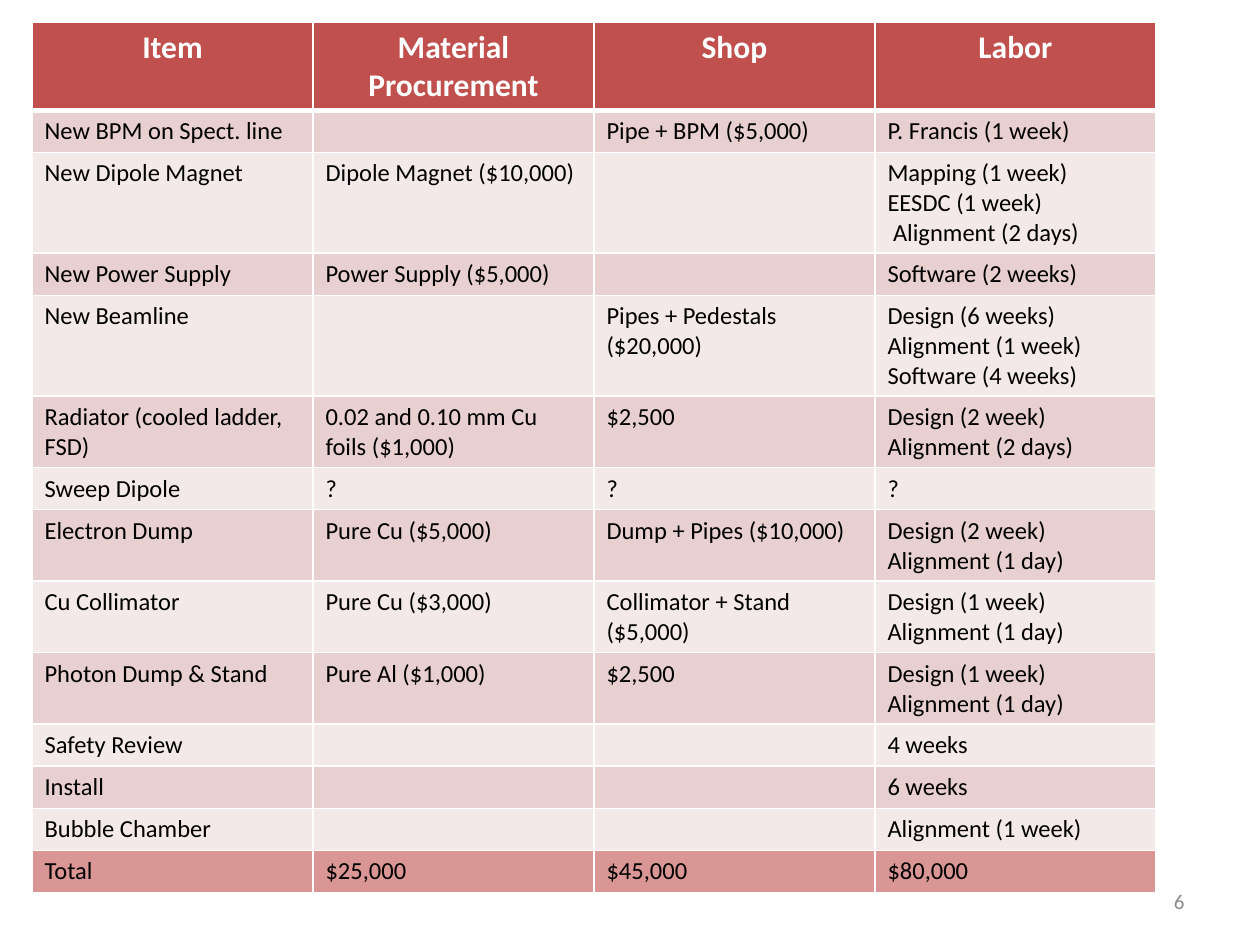
from lxml.etree import SubElement
from pptx import Presentation
from pptx.dml.color import RGBColor
from pptx.enum.text import MSO_ANCHOR as Anchor, PP_ALIGN as Align
from pptx.oxml.ns import qn
from pptx.util import Pt

PX = 914400 // 126  # EMU in one px
FONT = "Calibri"


def color(hex_string):
    return RGBColor.from_string(hex_string)


def add_border(cell, side, points):
    line = SubElement(cell._tc.get_or_add_tcPr(), qn("a:ln" + side), w=str(Pt(points)))
    fill = SubElement(line, qn("a:solidFill"))
    SubElement(fill, qn("a:srgbClr"), val="FFFFFF")


# Each line break in a cell starts a new paragraph
budget = [
    ["Item", "Material\nProcurement", "Shop", "Labor"],
    ["New BPM on Spect. line", "", "Pipe + BPM ($5,000)", "P. Francis (1 week)"],
    ["New Dipole Magnet", "Dipole Magnet ($10,000)", "",
     "Mapping (1 week)\nEESDC (1 week)\n Alignment (2 days)"],
    ["New Power Supply", "Power Supply ($5,000)", "", "Software (2 weeks)"],
    ["New Beamline", "", "Pipes + Pedestals ($20,000)",
     "Design (6 weeks)\nAlignment (1 week)\nSoftware (4 weeks)"],
    ["Radiator (cooled ladder,\nFSD)", "0.02 and 0.10 mm Cu foils ($1,000)", "$2,500",
     "Design (2 week)\nAlignment (2 days)"],
    ["Sweep Dipole", "?", "?", "?"],
    ["Electron Dump", "Pure Cu ($5,000)", "Dump + Pipes ($10,000)",
     "Design (2 week)\nAlignment (1 day)"],
    ["Cu Collimator", "Pure Cu ($3,000)", "Collimator + Stand ($5,000)",
     "Design (1 week)\nAlignment (1 day)"],
    ["Photon Dump & Stand", "Pure Al ($1,000)", "$2,500",
     "Design (1 week)\nAlignment (1 day)"],
    ["Safety Review", "", "", "4 weeks"],
    ["Install", "", "", "6 weeks"],
    ["Bubble Chamber", "", "", "Alignment (1 week)"],
    ["Total", "$25,000", "$45,000", "$80,000"],
]
last = len(budget) - 1

prs = Presentation()
prs.slide_width = 1260 * PX
prs.slide_height = 945 * PX
slide = prs.slides.add_slide(prs.slide_layouts[6])

# Page number
page_box = slide.shapes.add_textbox(903 * PX, 876 * PX, 294 * PX, 50 * PX)
page_frame = page_box.text_frame
page_frame.word_wrap = True
page_frame.vertical_anchor = Anchor.MIDDLE
page_line = page_frame.paragraphs[0]
page_line.alignment = Align.RIGHT
page_number = page_line.add_run()
page_number.text = "6"
page_number.font.size = Pt(12)
page_number.font.name = FONT
page_number.font.color.rgb = color("8C8C8C")

# Budget table: rows grow with their text
budget_frame = slide.shapes.add_table(len(budget), 4, 32 * PX, 22 * PX, 1124 * PX, 869 * PX)
table = budget_frame.table
for column in table.columns:
    column.width = 281 * PX

for r, entries in enumerate(budget):
    header = r == 0
    table.rows[r].height = (44 if header else 42) * PX
    if header:
        band = "C0504D"
    elif r == last:
        band = "D99694"
    else:
        band = "E8D0D0" if r % 2 else "F4E9E9"
    size = 18 if header else 14

    for c, entry in enumerate(entries):
        cell = table.cell(r, c)
        # Borders go before the fill, with a thick rule under the header
        add_border(cell, "L", 1)
        add_border(cell, "R", 1)
        add_border(cell, "T", 3 if r == 1 else 1)
        add_border(cell, "B", 3 if header else 1)
        cell.fill.solid()
        cell.fill.fore_color.rgb = color(band)

        for i, words in enumerate(entry.split("\n")):
            frame = cell.text_frame
            line = frame.add_paragraph() if i else frame.paragraphs[0]
            line.alignment = Align.CENTER if header else Align.LEFT
            if not words:
                # An empty cell keeps the body size, so its row stays low
                SubElement(line._p, qn("a:endParaRPr"), sz=str(size * 100))
                continue
            run = line.add_run()
            run.text = words
            run.font.size = Pt(size)
            run.font.name = FONT
            run.font.bold = header
            run.font.color.rgb = color("FFFFFF" if header else "000000")

budget_frame.height = 869 * PX

prs.save("out.pptx")
